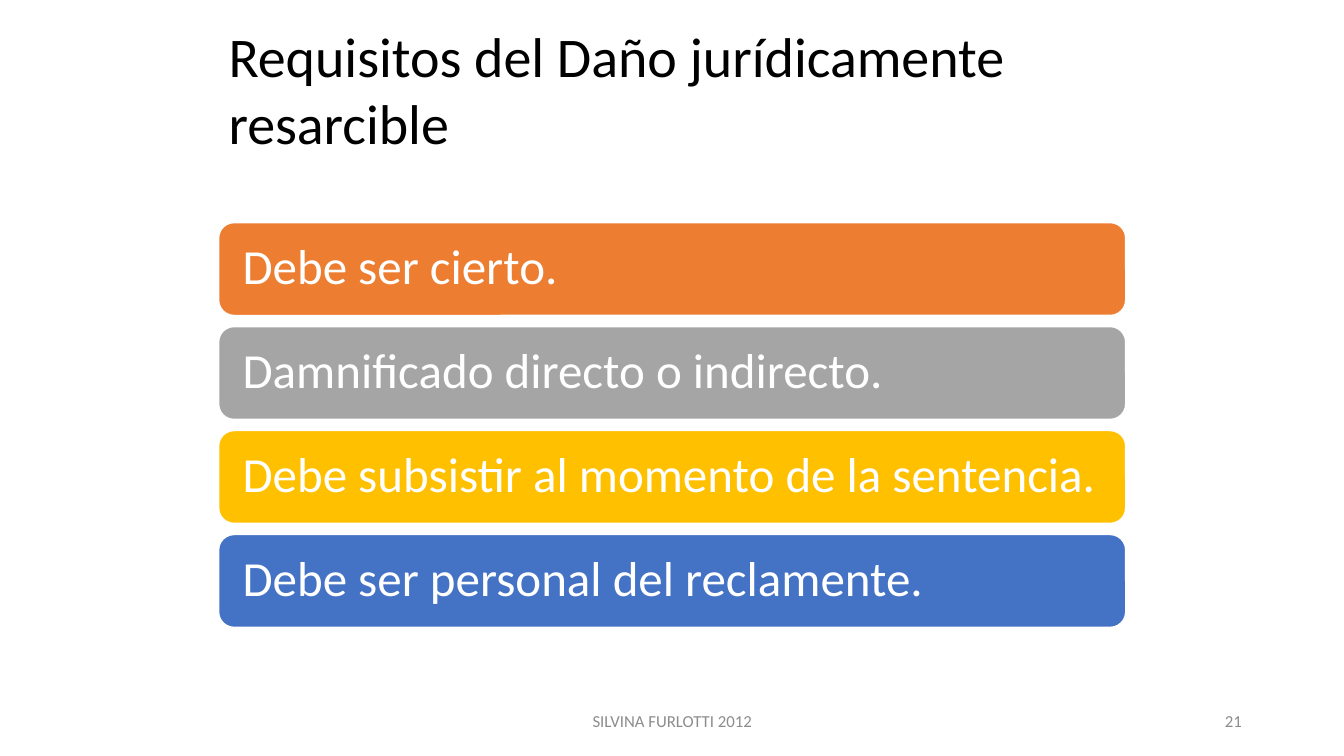
from dataclasses import dataclass

from pptx import Presentation
from pptx.dml.color import RGBColor
from pptx.enum.shapes import MSO_SHAPE
from pptx.enum.text import MSO_ANCHOR, MSO_AUTO_SIZE, PP_ALIGN
from pptx.util import Cm, Pt


@dataclass(frozen=True)
class Theme:
    font: str = "Calibri"
    black: str = "000000"
    white: str = "FFFFFF"
    gray: str = "8C8C8C"
    bars: tuple = ("ED7D31", "A5A5A5", "FFC000", "4472C4")
    title_size: int = 40
    bar_size: int = 35
    footer_size: int = 12


def apply_format(target, values):
    for name, value in values.items():
        setattr(target, name, value)


class SlideBuilder:
    def __init__(self, slide, theme):
        self.slide = slide
        self.theme = theme

    def set_text(self, shape, text, size, color, inset=0.25, **paragraph_format):
        frame = shape.text_frame
        frame.text = text
        apply_format(frame, {
            "word_wrap": True,
            "auto_size": MSO_AUTO_SIZE.NONE,
            "vertical_anchor": MSO_ANCHOR.MIDDLE,
            "margin_left": Cm(inset),
            "margin_right": Cm(inset),
        })
        paragraph = frame.paragraphs[0]
        apply_format(paragraph, {"alignment": PP_ALIGN.LEFT, **paragraph_format})
        font = paragraph.runs[0].font
        apply_format(font, {"name": self.theme.font, "size": Pt(size)})
        font.color.rgb = RGBColor.from_string(color)

    def title(self, text, left, top, width, height):
        title = self.slide.shapes.title
        apply_format(title, {"left": Cm(left), "top": Cm(top),
                             "width": Cm(width), "height": Cm(height)})
        self.set_text(title, text, self.theme.title_size, self.theme.black)

    def bar(self, text, color, left, top, width, height):
        bar = self.slide.shapes.add_shape(
            MSO_SHAPE.ROUNDED_RECTANGLE, Cm(left), Cm(top), Cm(width), Cm(height))
        bar.shadow.inherit = False
        bar.fill.solid()
        bar.fill.fore_color.rgb = RGBColor.from_string(color)
        bar.line.color.rgb = RGBColor.from_string(self.theme.white)
        bar.line.width = Pt(1)
        self.set_text(bar, text, self.theme.bar_size, self.theme.white,
                      inset=0.49, line_spacing=0.9)

    def footer(self, text, alignment, left, top, width, height):
        box = self.slide.shapes.add_textbox(Cm(left), Cm(top), Cm(width), Cm(height))
        self.set_text(box, text, self.theme.footer_size, self.theme.gray,
                      alignment=alignment)


def main():
    presentation = Presentation()
    presentation.slide_width = Cm(33.87)
    presentation.slide_height = Cm(19.05)
    title_only = presentation.slide_layouts[5]
    theme = Theme()
    builder = SlideBuilder(presentation.slides.add_slide(title_only), theme)

    # Title
    left, width = 5.51, 22.86
    builder.title("Requisitos del Daño jurídicamente resarcible", left, 0.41, width, 3.66)

    # Requirement bars, evenly stacked
    requirements = (
        "Debe ser cierto.",
        "Damnificado directo o indirecto.",
        "Debe subsistir al momento de la sentencia.",
        "Debe ser personal del reclamente.",
    )
    first_top, step, bar_height = 5.61, 2.62, 2.34
    for index, (text, color) in enumerate(zip(requirements, theme.bars)):
        builder.bar(text, color, left, first_top + index * step, width, bar_height)

    # Footer and slide number
    footer_top, footer_height = 17.65, 1.02
    builder.footer("SILVINA FURLOTTI 2012", PP_ALIGN.CENTER,
                   11.23, footer_top, 11.43, footer_height)
    builder.footer("21", PP_ALIGN.RIGHT, 23.93, footer_top, 7.62, footer_height)

    presentation.save("out.pptx")


if __name__ == "__main__":
    main()
